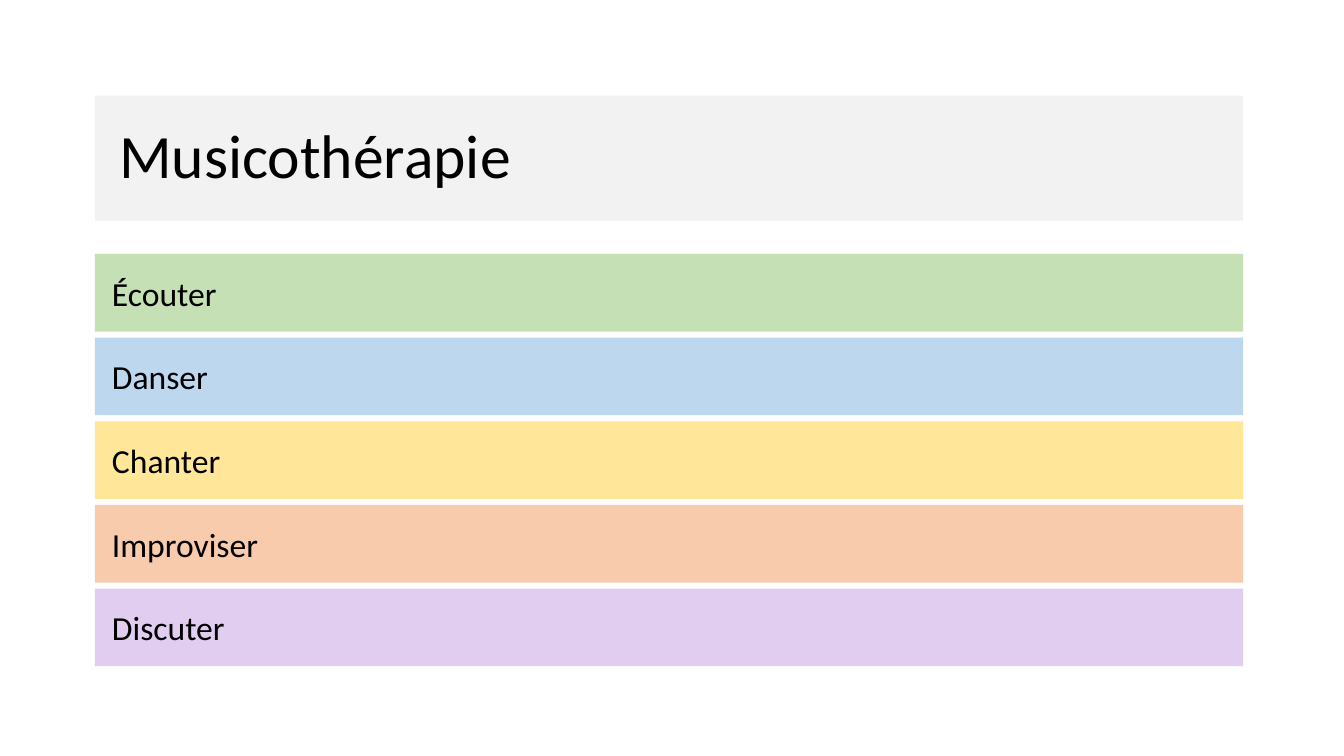
from pptx import Presentation
from pptx.dml.color import RGBColor
from pptx.enum.shapes import MSO_SHAPE as Shape
from pptx.enum.text import MSO_ANCHOR as Anchor, PP_ALIGN as Align
from pptx.util import Pt

PX = 9144  # EMU per px, 100 px to the inch

THEME = {
    "font": "Calibri",
    "text": "000000",
    "title_size": 44,
    "row_size": 24,
    "title_fill": "F2F2F2",
    "green": "C5E0B4",
    "blue": "BDD7EE",
    "yellow": "FFE699",
    "orange": "F8CBAD",
    "purple": "E0CDEF",
}

BAR_LEFT, BAR_WIDTH = 94, 1139
TITLE_TOP, TITLE_HEIGHT = 95, 124
ROW_TOP, ROW_HEIGHT, ROW_PITCH = 252, 77, 83


def add_bar(slide, text, top, height, fill, size, indent):
    """Add a full-width colour bar with left-aligned text."""
    shape = slide.shapes.add_shape(
        Shape.RECTANGLE, BAR_LEFT * PX, top * PX, BAR_WIDTH * PX, height * PX)
    shape.shadow.inherit = False
    shape.fill.solid()
    shape.fill.fore_color.rgb = RGBColor.from_string(fill)
    shape.line.fill.background()

    frame = shape.text_frame
    frame_format = {"word_wrap": True, "vertical_anchor": Anchor.MIDDLE,
                    "margin_left": indent * PX}
    for name, value in frame_format.items():
        setattr(frame, name, value)

    paragraph = frame.paragraphs[0]
    paragraph.text = text
    paragraph.alignment = Align.LEFT
    font_format = {"name": THEME["font"], "size": Pt(size)}
    font = paragraph.runs[0].font
    for name, value in font_format.items():
        setattr(font, name, value)
    font.color.rgb = RGBColor.from_string(THEME["text"])
    return shape


presentation = Presentation()
presentation.slide_width = 1333 * PX
presentation.slide_height = 750 * PX
slide = presentation.slides.add_slide(presentation.slide_layouts[6])

# Title bar
title = add_bar(slide, "Musicothérapie", TITLE_TOP, TITLE_HEIGHT,
                THEME["title_fill"], THEME["title_size"], indent=24)
title.text_frame.paragraphs[0].line_spacing = 0.9

# Activity rows
activities = [
    ("Écouter", "green"),
    ("Danser", "blue"),
    ("Chanter", "yellow"),
    ("Improviser", "orange"),
    ("Discuter", "purple"),
]
for index, (activity, colour) in enumerate(activities):
    add_bar(slide, activity, ROW_TOP + index * ROW_PITCH, ROW_HEIGHT,
            THEME[colour], THEME["row_size"], indent=17)

presentation.save("out.pptx")
